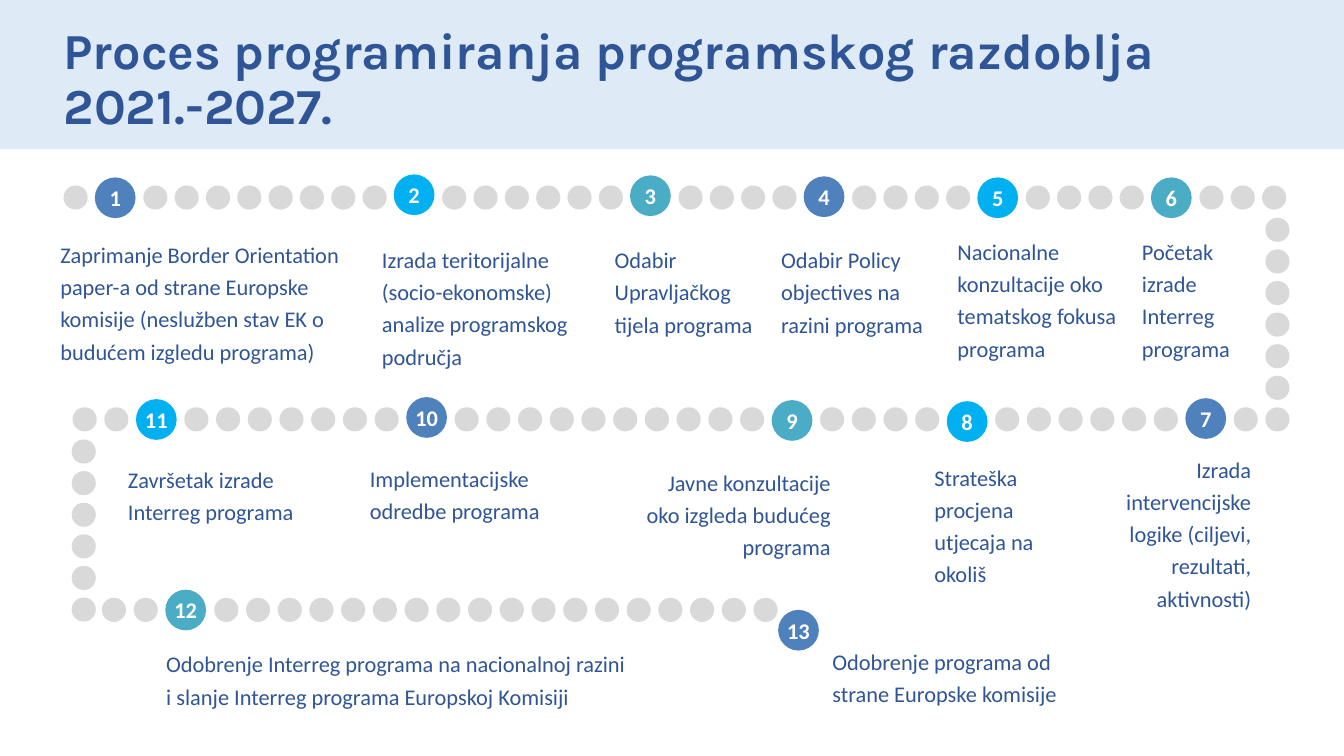
import pptx
import pptx.util
import pptx.dml.color
import pptx.enum.shapes
import pptx.enum.text

SLIDE_WIDTH = pptx.util.Inches(13.33)
SLIDE_HEIGHT = pptx.util.Inches(7.5)
NAVY, PALE_BLUE, GREY, WHITE = "2F5597", "DEEBF7", "D9D9D9", "FFFFFF"
STEP_COLOURS = ("4F81BD", "00B0F0", "4BACC6")
LEFT = pptx.enum.text.PP_ALIGN.LEFT
RIGHT = pptx.enum.text.PP_ALIGN.RIGHT
CENTER = pptx.enum.text.PP_ALIGN.CENTER
MIDDLE = pptx.enum.text.MSO_ANCHOR.MIDDLE
RECTANGLE = pptx.enum.shapes.MSO_SHAPE.RECTANGLE
OVAL = pptx.enum.shapes.MSO_SHAPE.OVAL

# All lengths below are percentages of the slide's width or height
DOT = 1.8
MARKER = 3.03

# Rows: left, top, pitch, gap across a marker, then dots and (step, top) markers in turn
DOT_ROWS = [
    (4.73, 24.53, 2.33, 5.93,
     [1, (1, 23.47), 8, (2, 23.07), 6, (3, 23.2), 4, (4, 23.33),
      4, (5, 23.47), 4, (6, 23.47), 3]),
    (5.4, 53.87, 2.36, 5.95,
     [2, (11, 52.8), 7, (10, 52.53), 10, (9, 52.93), 4, (8, 53.07),
      6, (7, 52.67), 1]),
    (7.58, 79.07, 2.36, 6, [2, (12, 78), 18]),
]
# Columns: left, top, number of dots
DOT_COLUMNS = [(94.15, 28.8, 7), (5.33, 58.13, 6)]
COLUMN_PITCH = 4.18

# Steps: left, top, width, number of lines, alignment, text
STEPS = [
    (3.75, 30.53, 23.33, 4, LEFT,
     "Zaprimanje Border Orientation paper-a od strane Europske komisije "
     "(neslužben stav EK o budućem izgledu programa)"),
    (27.68, 31.2, 17.2, 4, LEFT,
     "Izrada teritorijalne\n(socio-ekonomske) analize programskog područja"),
    (45, 31.2, 12.6, 3, LEFT, "Odabir Upravljačkog tijela programa"),
    (57.38, 31.2, 12.6, 3, LEFT, "Odabir Policy objectives na\nrazini programa"),
    (70.5, 30.13, 13.6, 4, LEFT,
     "Nacionalne konzultacije oko tematskog fokusa programa"),
    (84.23, 30.13, 9.45, 4, LEFT, "Početak izrade Interreg programa"),
    (80.85, 58.93, 12.98, 5, RIGHT,
     "Izrada intervencijske logike (ciljevi, rezultati, aktivnosti)"),
    (68.78, 60, 9.53, 4, LEFT, "Strateška procjena utjecaja na okoliš"),
    (47.25, 60.67, 15.3, 3, RIGHT,
     "Javne konzultacije oko izgleda budućeg programa"),
    (26.78, 60.13, 14.63, 2, LEFT, "Implementacijske odredbe programa"),
    (8.78, 60.27, 17.18, 2, LEFT, "Završetak izrade Interreg programa"),
    (11.63, 84.67, 35.85, 2, LEFT,
     "Odobrenje Interreg programa na nacionalnoj razini "
     "i slanje Interreg programa Europskoj Komisiji"),
    (61.2, 84.4, 19.73, 2, LEFT, "Odobrenje programa od strane Europske komisije"),
]


def across(share):
    return round(SLIDE_WIDTH * share / 100)


def down(share):
    return round(SLIDE_HEIGHT * share / 100)


def colour(hex_string):
    return pptx.dml.color.RGBColor.from_string(hex_string)


def write(frame, text, size, font, hex_string, bold=False, align=LEFT, spacing=1.0):
    frame.text = text
    for paragraph in frame.paragraphs:
        paragraph.alignment = align
        paragraph.line_spacing = spacing
        for run in paragraph.runs:
            run.font.size = pptx.util.Pt(size)
            run.font.name = font
            run.font.bold = bold
            run.font.color.rgb = colour(hex_string)


def add_plain_shape(slide, preset, left, top, width, height, hex_string):
    plain = slide.shapes.add_shape(preset, left, top, width, height)
    plain.shadow.inherit = False
    plain.fill.solid()
    plain.fill.fore_color.rgb = colour(hex_string)
    plain.line.fill.background()
    return plain


def add_circle(slide, left, top, diameter, hex_string):
    side = across(diameter)
    return add_plain_shape(slide, OVAL, across(left), down(top), side, side, hex_string)


def add_marker(slide, step, left, top):
    step_colour = STEP_COLOURS[(step - 1) % len(STEP_COLOURS)]
    frame = add_circle(slide, left, top, MARKER, step_colour).text_frame
    frame.margin_left = frame.margin_right = 0
    frame.margin_top = frame.margin_bottom = 0
    frame.word_wrap = False
    frame.vertical_anchor = MIDDLE
    write(frame, str(step), 16, "Calibri", WHITE, bold=True, align=CENTER)


def add_dot_row(slide, left, top, pitch, gap, sequence):
    for part in sequence:
        if isinstance(part, tuple):
            step, marker_top = part
            add_marker(slide, step, left, marker_top)
            left += gap - pitch
        else:
            for _ in range(part):
                add_circle(slide, left, top, DOT, GREY)
                left += pitch


def add_dot_column(slide, left, top, count):
    for index in range(count):
        add_circle(slide, left, top + index * COLUMN_PITCH, DOT, GREY)


def add_description(slide, left, top, width, lines, align, text):
    height = 1.2 + 4.27 * lines
    description = slide.shapes.add_textbox(
        across(left), down(top), across(width), down(height))
    description.text_frame.word_wrap = True
    write(description.text_frame, text, 16, "Calibri", NAVY, align=align, spacing=1.2)


def add_heading(slide, text):
    heading = slide.shapes.title
    heading.left, heading.top = across(3.98), down(3.6)
    heading.width, heading.height = across(92.05), down(14.13)
    heading.text_frame.word_wrap = True
    heading.text_frame.vertical_anchor = MIDDLE
    write(heading.text_frame, text, 36, "Karla", NAVY, bold=True, spacing=0.9)
    # The band lies behind the heading
    band = add_plain_shape(slide, RECTANGLE, 0, 0, SLIDE_WIDTH, down(19.73), PALE_BLUE)
    heading.element.addprevious(band.element)


def main():
    presentation = pptx.Presentation()
    presentation.slide_width = SLIDE_WIDTH
    presentation.slide_height = SLIDE_HEIGHT
    slide = presentation.slides.add_slide(presentation.slide_layouts[5])

    add_heading(slide, "Proces programiranja programskog razdoblja 2021.-2027.")

    # Step descriptions
    for step in STEPS:
        add_description(slide, *step)

    # Winding dotted route with numbered markers
    for row in DOT_ROWS:
        add_dot_row(slide, *row)
    for column in DOT_COLUMNS:
        add_dot_column(slide, *column)
    add_marker(slide, len(STEPS), 57.9, 80.67)

    presentation.save("out.pptx")


if __name__ == "__main__":
    main()
